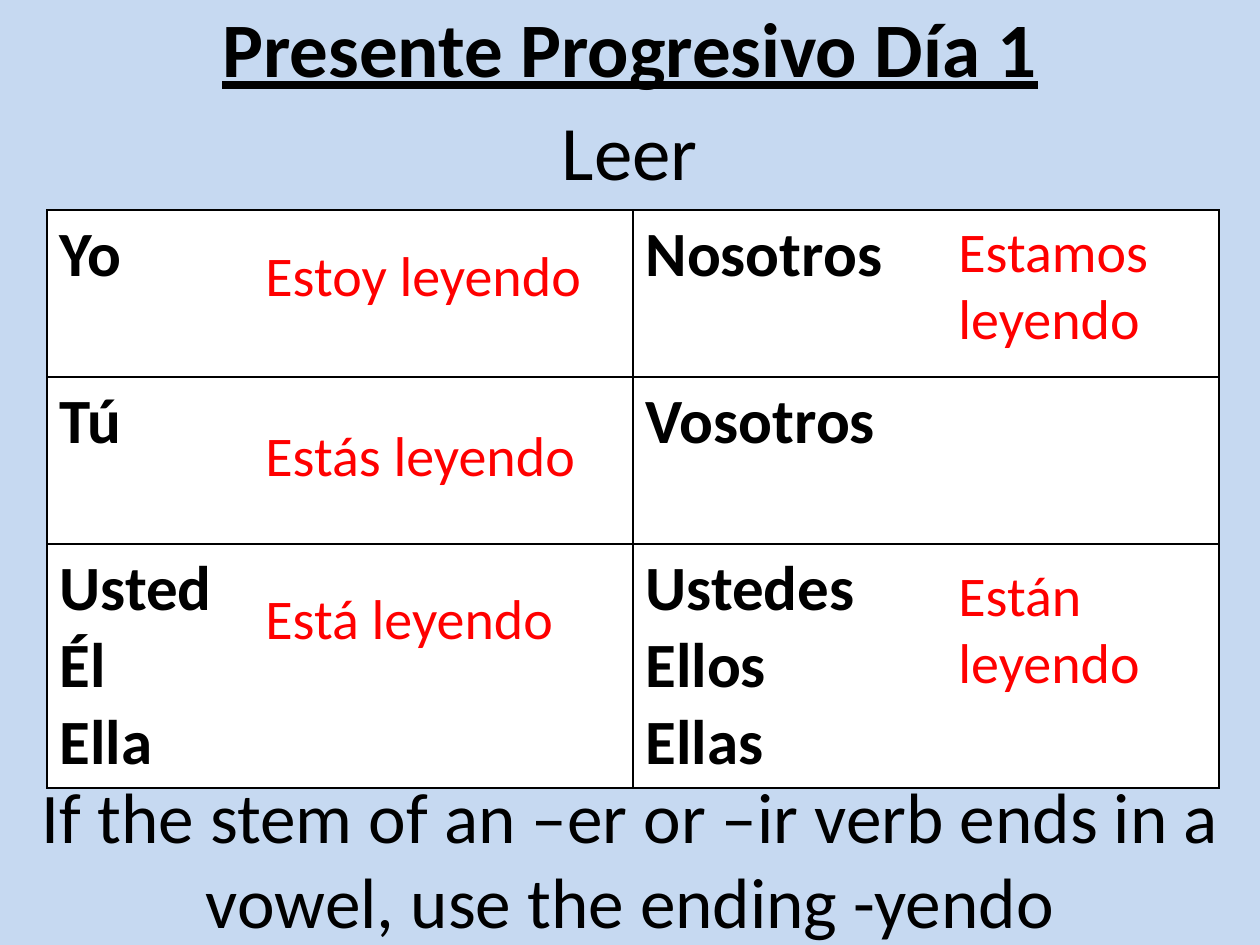
from dataclasses import dataclass

from lxml.etree import SubElement
from pptx import Presentation
from pptx.dml.color import RGBColor
from pptx.enum.text import MSO_ANCHOR, MSO_AUTO_SIZE, PP_ALIGN
from pptx.oxml.ns import qn
from pptx.slide import Slide
from pptx.table import _Cell
from pptx.util import Emu, Inches, Pt

PX_PER_INCH = 126
FONT = "Calibri"
COLORS = {"background": "C6D9F1", "ink": "000000", "answer": "FF0000", "cell": "FFFFFF"}


@dataclass(frozen=True)
class Heading:
    text: str
    top: int
    size: float
    emphasis: bool = False


@dataclass(frozen=True)
class Answer:
    text: str
    left: int
    top: int
    width: int
    height: int


HEADINGS = [
    Heading("Presente Progresivo Día 1", -39, 44, True),
    Heading("Leer", 64, 44),
    Heading("If the stem of an –er or –ir verb ends in a vowel, use the ending -yendo", 772, 40.7),
]
ANSWERS = [
    Answer("Estoy leyendo", 253, 234, 345, 81),
    Answer("Estás leyendo", 253, 414, 345, 81),
    Answer("Está leyendo", 253, 577, 345, 81),
    Answer("Estamos leyendo", 946, 210, 273, 149),
    Answer("Están leyendo", 946, 554, 273, 149),
]
PRONOUNS = [
    [["Yo"], ["Nosotros"]],
    [["Tú"], ["Vosotros"]],
    [["Usted", "Él", "Ella"], ["Ustedes", "Ellos", "Ellas"]],
]
TABLE_LEFT, TABLE_TOP = 47, 210
COLUMN_WIDTH = 586
ROW_HEIGHTS = [167, 167, 244]
SLIDE_WIDTH, HEADING_HEIGHT = 1260, 171


def px(length: int) -> Emu:
    return Emu(round(length * Inches(1) / PX_PER_INCH))


def color(name: str) -> RGBColor:
    return RGBColor.from_string(COLORS[name])


def add_run(paragraph, text: str, size: float, ink: str, bold: bool = False, underline: bool = False) -> None:
    run = paragraph.add_run()
    run.text = text
    run.font.name = FONT
    run.font.size = Pt(size)
    run.font.bold = bold
    run.font.underline = underline
    run.font.color.rgb = color(ink)


def add_heading(slide: Slide, heading: Heading) -> None:
    shape = slide.shapes.add_textbox(0, px(heading.top), px(SLIDE_WIDTH), px(HEADING_HEIGHT))
    frame = shape.text_frame
    frame.word_wrap = True
    frame.vertical_anchor = MSO_ANCHOR.MIDDLE
    paragraph = frame.paragraphs[0]
    paragraph.alignment = PP_ALIGN.CENTER
    add_run(paragraph, heading.text, heading.size, "ink", heading.emphasis, heading.emphasis)


def add_answer(slide: Slide, answer: Answer) -> None:
    shape = slide.shapes.add_textbox(px(answer.left), px(answer.top), px(answer.width), px(answer.height))
    frame = shape.text_frame
    frame.word_wrap = True
    frame.auto_size = MSO_AUTO_SIZE.SHAPE_TO_FIT_TEXT
    add_run(frame.paragraphs[0], answer.text, 32, "answer")


def style_cell(cell: _Cell) -> None:
    properties = cell._tc.get_or_add_tcPr()
    for side in ("a:lnL", "a:lnR", "a:lnT", "a:lnB"):
        line = SubElement(properties, qn(side), w=str(Pt(1)))
        fill = SubElement(line, qn("a:solidFill"))
        SubElement(fill, qn("a:srgbClr"), val=COLORS["ink"])
    cell.fill.solid()
    cell.fill.fore_color.rgb = color("cell")


def fill_cell(cell: _Cell, pronouns: list[str]) -> None:
    style_cell(cell)
    frame = cell.text_frame
    for index, pronoun in enumerate(pronouns):
        paragraph = frame.add_paragraph() if index else frame.paragraphs[0]
        add_run(paragraph, pronoun, 36, "ink", bold=True)


def add_pronoun_table(slide: Slide) -> None:
    rows, columns = len(PRONOUNS), len(PRONOUNS[0])
    shape = slide.shapes.add_table(
        rows, columns, px(TABLE_LEFT), px(TABLE_TOP), px(columns * COLUMN_WIDTH), px(sum(ROW_HEIGHTS))
    )
    table = shape.table
    table.first_row = False
    table.horz_banding = False
    for column in table.columns:
        column.width = px(COLUMN_WIDTH)
    for row, height, row_pronouns in zip(table.rows, ROW_HEIGHTS, PRONOUNS):
        row.height = px(height)
        for cell, pronouns in zip(row.cells, row_pronouns):
            fill_cell(cell, pronouns)


def main() -> None:
    presentation = Presentation()
    presentation.slide_width = Inches(10)
    presentation.slide_height = Inches(7.5)
    slide = presentation.slides.add_slide(presentation.slide_layouts[6])
    slide.background.fill.solid()
    slide.background.fill.fore_color.rgb = color("background")
    add_pronoun_table(slide)
    for heading in HEADINGS:
        add_heading(slide, heading)
    for answer in ANSWERS:
        add_answer(slide, answer)
    presentation.save("out.pptx")


if __name__ == "__main__":
    main()
